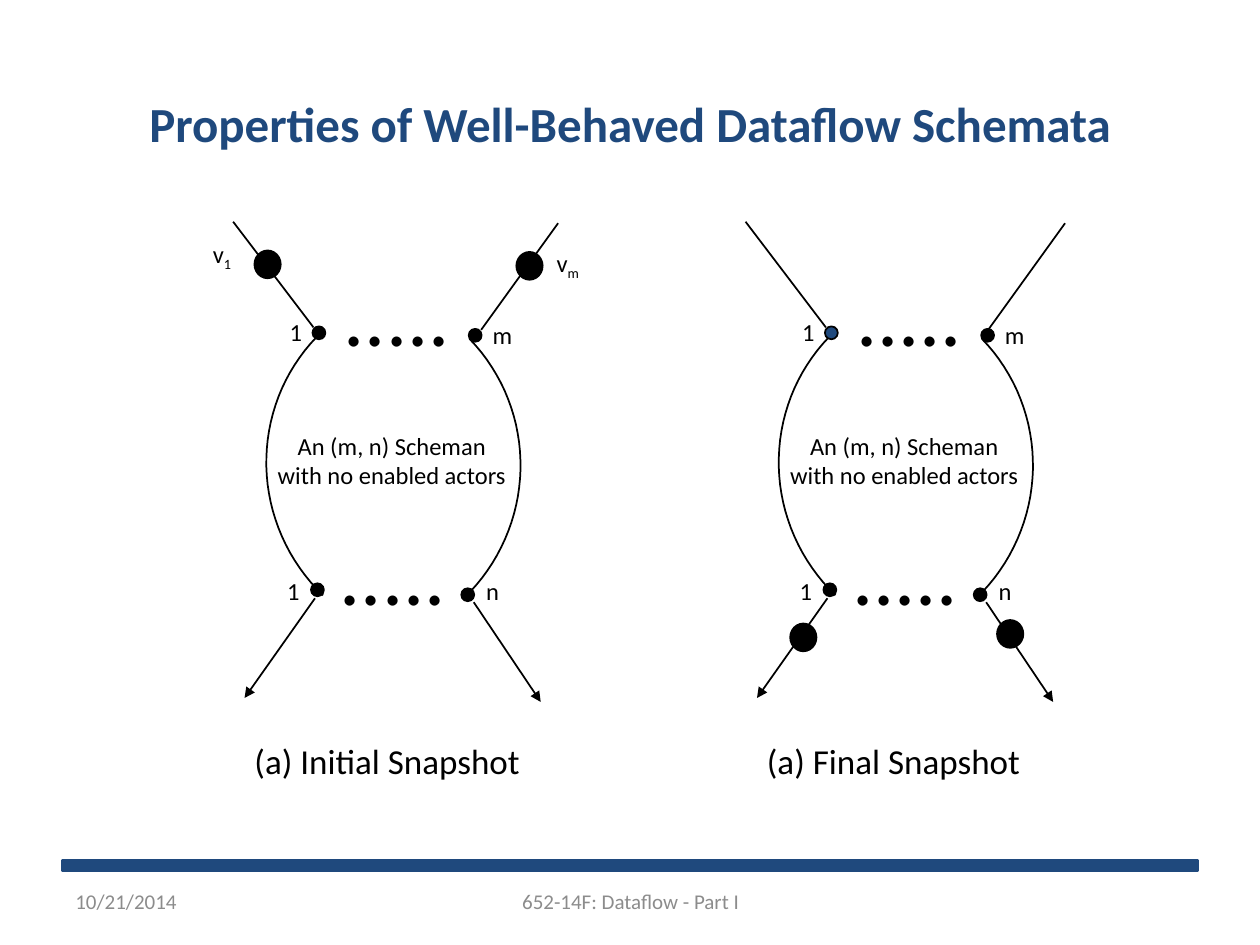
import math

import lxml.etree
import pptx
import pptx.dml.color
import pptx.enum.shapes
import pptx.enum.text
import pptx.oxml.ns
import pptx.util

Cm = pptx.util.Cm
Pt = pptx.util.Pt
SHAPES = pptx.enum.shapes.MSO_SHAPE
ALIGN = pptx.enum.text.PP_ALIGN
ANCHOR = pptx.enum.text.MSO_ANCHOR

BLACK = pptx.dml.color.RGBColor(0x00, 0x00, 0x00)
NAVY = pptx.dml.color.RGBColor(0x1F, 0x49, 0x7D)
GRAY = pptx.dml.color.RGBColor(0x8C, 0x8C, 0x8C)
FONT = "Calibri"
PORT_SIZE = 0.26


def add_run(paragraph, text, size, color, bold=False, subscript=False):
    run = paragraph.add_run()
    run.text = text
    run.font.name = FONT
    run.font.size = Pt(size)
    run.font.bold = bold
    run.font.color.rgb = color
    if subscript:
        run.font._element.set("baseline", "-25000")


def add_text(slide, box, lines, size=14, color=BLACK, align=ALIGN.LEFT,
             anchor=ANCHOR.TOP, wrap=False, subscript=""):
    shape = slide.shapes.add_textbox(*map(Cm, box))
    frame = shape.text_frame
    frame.word_wrap = wrap
    frame.vertical_anchor = anchor
    for index, line in enumerate(lines):
        paragraph = frame.add_paragraph() if index else frame.paragraphs[0]
        paragraph.alignment = align
        add_run(paragraph, line, size, color)
    if subscript:
        add_run(paragraph, subscript, size, color, subscript=True)


def add_filled(slide, kind, box, fill=BLACK, line=BLACK, width=1):
    shape = slide.shapes.add_shape(kind, *map(Cm, box))
    shape.shadow.inherit = False
    shape.fill.solid()
    shape.fill.fore_color.rgb = fill
    shape.line.color.rgb = line
    shape.line.width = Pt(width)


def add_line(slide, start, end, arrow=False):
    connector = slide.shapes.add_connector(
        pptx.enum.shapes.MSO_CONNECTOR.STRAIGHT, *map(Cm, start + end))
    connector.line.color.rgb = BLACK
    connector.line.width = Pt(1)
    if arrow:
        tail = lxml.etree.SubElement(
            connector.line._get_or_add_ln(), pptx.oxml.ns.qn("a:tailEnd"))
        tail.set("type", "triangle")
    lxml.etree.SubElement(
        connector._element.spPr, pptx.oxml.ns.qn("a:effectLst"))


def add_quarter_arc(slide, box, rotation, mirrored=False, steps=32):
    left, top, width, height = box
    points = []
    for step in range(steps + 1):
        angle = math.pi / 2 * step / steps
        across = math.sin(angle) if mirrored else 1 - math.cos(angle)
        down = 1 - (math.cos(angle) if mirrored else math.sin(angle))
        points.append((Cm(left + width * across), Cm(top + height * down)))
    builder = slide.shapes.build_freeform(*points[0])
    builder.add_line_segments(points[1:], close=False)
    shape = builder.convert_to_shape()
    shape.rotation = rotation
    shape.shadow.inherit = False
    shape.fill.background()
    shape.line.color.rgb = BLACK
    shape.line.width = Pt(1)


def add_snapshot(slide, left, top, caption, tokens, first_port=BLACK,
                 input_shift=0, values=()):
    def at(x, y, *size):
        return (left + x, top + y) + size

    add_quarter_arc(slide, at(0.62, 3.14, 3.66, 3.71), 314)
    add_quarter_arc(slide, at(3.57, 3.19, 3.68, 3.71), 46, mirrored=True)

    add_line(slide, at(2.32, 2.2), at(0.7, 0.07))
    add_line(slide, at(5.7 + input_shift, 2.25), at(7.25 + input_shift, 0.1))
    add_line(slide, at(2.35, 7.66), at(0.93, 9.67), arrow=True)
    add_line(slide, at(5.55, 7.74), at(6.9, 9.75), arrow=True)

    ports = [(2.3, 2.18, first_port), (5.45, 2.23, BLACK),
             (2.27, 7.36, BLACK), (5.3, 7.46, BLACK)]
    for x, y, fill in ports:
        add_filled(slide, SHAPES.OVAL, at(x, y, PORT_SIZE, PORT_SIZE), fill)
    for x, y in tokens:
        add_filled(slide, SHAPES.OVAL, at(x, y, 0.53, 0.56))

    for x, y in [(2.68, 0.76), (2.6, 5.99)]:
        add_text(slide, at(x, y, 2.87, 2.29), ["....."], 48)
    labels = [("1", 1.59, 1.87, 0.79), ("m", 5.68, 1.92, 0.91),
              ("1", 1.54, 7.08, 0.79), ("n", 5.55, 7.08, 0.79)]
    for text, x, y, width in labels:
        add_text(slide, at(x, y, width, 0.84), [text])
    for subscript, x, y, width in values:
        add_text(slide, at(x, y, width, 0.84), ["v"], subscript=subscript)

    add_text(slide, at(1.18, 4.16, 5.44, 1.42),
             ["An (m, n) Scheman", "with no enabled actors"],
             align=ALIGN.CENTER)
    add_text(slide, at(0.88, 10.38, 6.35, 1.09), [caption], 20)


def add_title(slide, box, text):
    title = slide.shapes.title
    title.left, title.top, title.width, title.height = map(Cm, box)
    title.text_frame.vertical_anchor = ANCHOR.MIDDLE
    paragraph = title.text_frame.paragraphs[0]
    paragraph.alignment = ALIGN.CENTER
    add_run(paragraph, text, 28, NAVY, bold=True)


def add_footer(slide, left, top, width):
    add_filled(slide, SHAPES.RECTANGLE, (left, top, width, 0.2),
               NAVY, NAVY, 2)
    add_text(slide, (left, top + 0.3, 5.92, 1.02), ["10/21/2014"], 12, GRAY,
             anchor=ANCHOR.MIDDLE, wrap=True)
    add_text(slide, (left + 7.42, top + 0.3, 8.05, 1.02),
             ["652-14F: Dataflow - Part I"], 12, GRAY, ALIGN.CENTER,
             ANCHOR.MIDDLE, wrap=True)


def main():
    presentation = pptx.Presentation()
    presentation.slide_width = Cm(25.4)
    presentation.slide_height = Cm(19.05)
    slide = presentation.slides.add_slide(presentation.slide_layouts[5])

    add_title(slide, (0, 1.47, 25.4, 2.01),
              "Properties of Well-Behaved Dataflow Schemata")
    add_snapshot(slide, 4, 4.4, "(a) Initial Snapshot",
                 tokens=[(1.13, 0.65), (6.41, 0.68)],
                 values=[("1", 0.04, 0.3, 0.91), ("m", 6.97, 0.48, 1.02)])
    add_snapshot(slide, 14.33, 4.4, "(a) Final Snapshot",
                 tokens=[(1.6, 8.17), (5.77, 8.1)],
                 first_port=NAVY, input_shift=-0.11)
    add_footer(slide, 1.27, 17.35, 22.86)

    presentation.save("out.pptx")


if __name__ == "__main__":
    main()
